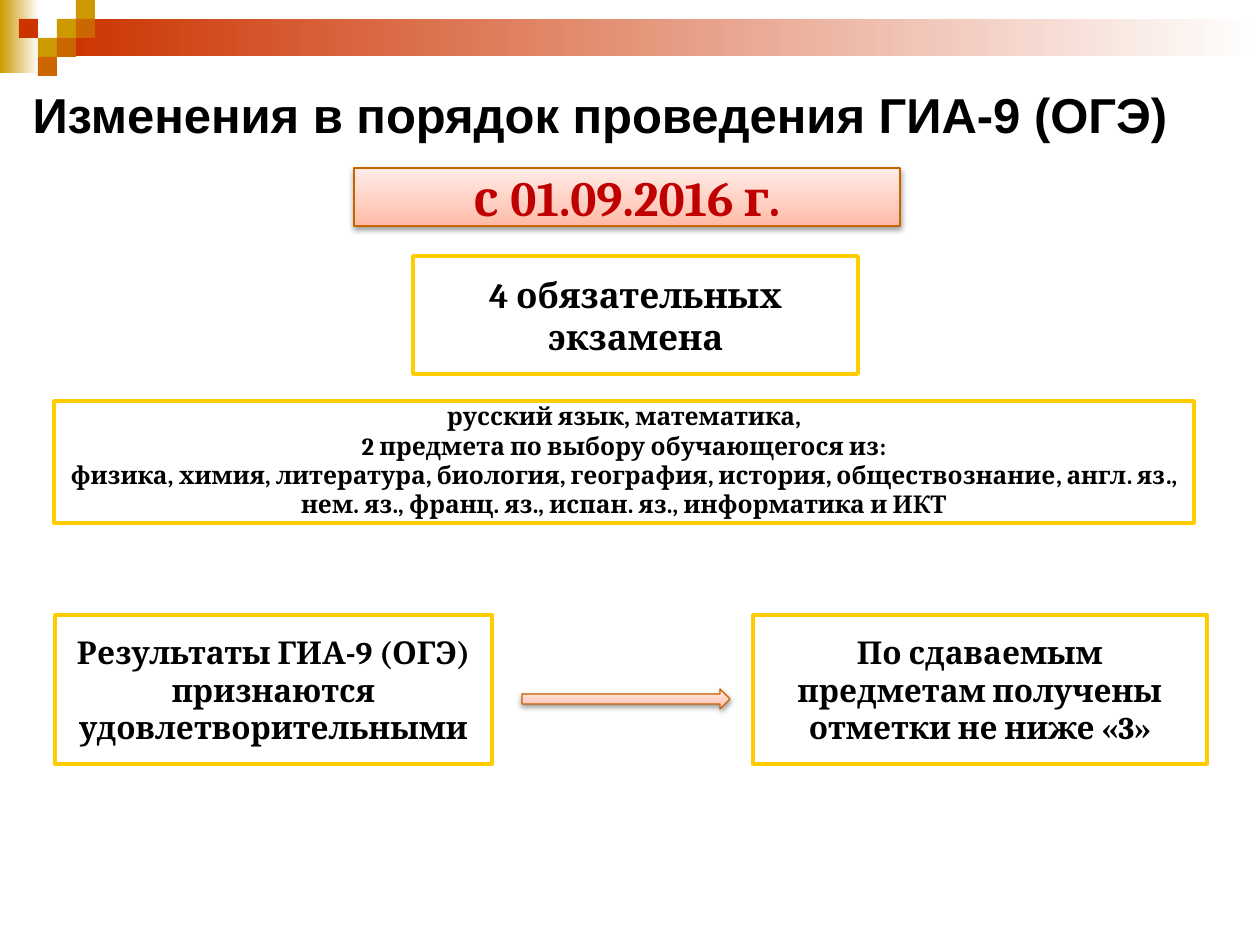
import copy
import dataclasses
import typing

import lxml.etree
import pptx
import pptx.dml.color
import pptx.enum.shapes
import pptx.enum.text
import pptx.oxml.ns
import pptx.util

Shape = pptx.enum.shapes.MSO_SHAPE
Align = pptx.enum.text.PP_ALIGN
Middle = pptx.enum.text.MSO_ANCHOR.MIDDLE
Grow = pptx.enum.text.MSO_AUTO_SIZE.SHAPE_TO_FIT_TEXT
Stops = tuple[tuple[float, str], ...]
SCALE = 914400 / 126


@dataclasses.dataclass(frozen=True)
class Theme:
    gold: str = "CC9900"
    rust: str = "CC6600"
    red: str = "CC3300"
    white: str = "FFFFFF"
    black: str = "000000"
    frame: str = "FFCC00"
    edge: str = "C86400"
    date: str = "C00000"
    blush: Stops = ((0, "FFB9A5"), (0.35, "FFCDBF"), (1, "FFECE7"))
    head: int = 28
    large: int = 20
    mid: int = 18
    small: int = 14
    sans: str = "Arial"
    serif: str = "Cambria"


THEME = Theme()


@dataclasses.dataclass(frozen=True)
class Area:
    left: int
    top: int
    width: int
    height: int


@dataclasses.dataclass(frozen=True)
class Card:
    area: Area
    size: int
    lines: tuple[str, ...]
    inset: tuple[int, int] = (6, 6)


@dataclasses.dataclass(frozen=True)
class Tile:
    col: int
    row: int
    color: str


def px(count: int) -> int:
    return round(count * SCALE)


def tint(code: str) -> pptx.dml.color.RGBColor:
    return pptx.dml.color.RGBColor.from_string(code)


def apply(item: typing.Any, values: dict[str, typing.Any]) -> None:
    for name, value in values.items():
        setattr(item, name, value)


def place(item: typing.Any, area: Area) -> None:
    apply(item, {name: px(size) for name, size in dataclasses.asdict(area).items()})


def blend(fill: typing.Any, stops: Stops, angle: int) -> None:
    fill.gradient()
    fill.gradient_angle = angle
    first = fill.gradient_stops[0]._gs
    for _ in stops[2:]:
        first.addnext(copy.deepcopy(first))
    for stop, (spot, code) in zip(fill.gradient_stops, stops):
        stop.position = spot
        stop.color.rgb = tint(code)


def block(slide: typing.Any, area: Area, paint: str | Stops, angle: int = 0,
          line: tuple[str, float] | None = None, kind: Shape = Shape.RECTANGLE) -> typing.Any:
    shape = slide.shapes.add_shape(kind, 0, 0, 0, 0)
    place(shape, area)
    shape.shadow.inherit = False
    if isinstance(paint, str):
        shape.fill.solid()
        shape.fill.fore_color.rgb = tint(paint)
    else:
        blend(shape.fill, paint, angle)
    if line:
        shape.line.color.rgb = tint(line[0])
        shape.line.width = pptx.util.Pt(line[1])
    else:
        shape.line.fill.background()
    return shape


def shade(shape: typing.Any) -> None:
    tag = pptx.oxml.ns.qn
    effects = shape._element.spPr.find(tag("a:effectLst"))
    outer = lxml.etree.SubElement(effects, tag("a:outerShdw"), blurRad="40000",
                                  dist="20000", dir="5400000", rotWithShape="0")
    color = lxml.etree.SubElement(outer, tag("a:srgbClr"), val=THEME.black)
    lxml.etree.SubElement(color, tag("a:alpha"), val="38000")


def write(shape: typing.Any, lines: tuple[str, ...], size: int, color: str, face: str,
          align: Align = Align.CENTER, inset: tuple[int, int] = (6, 6)) -> None:
    frame = shape.text_frame
    apply(frame, {"word_wrap": True, "vertical_anchor": Middle,
                  "margin_top": px(inset[0]), "margin_bottom": px(inset[1])})
    frame.text = "\n".join(lines)
    for para in frame.paragraphs:
        para.alignment = align
        for run in para.runs:
            apply(run.font, {"size": pptx.util.Pt(size), "name": face, "bold": True})
            run.font.color.rgb = tint(color)


def banner(slide: typing.Any) -> None:
    block(slide, Area(0, 0, 39, 73), ((0, THEME.gold), (1, THEME.white)))
    block(slide, Area(57, 19, 1203, 37), ((0, THEME.red), (1, THEME.white)))
    side = 19
    tiles = (
        Tile(3, 1, THEME.gold), Tile(4, 0, THEME.gold), Tile(4, 1, THEME.rust),
        Tile(2, 2, THEME.gold), Tile(1, 1, THEME.red), Tile(3, 2, THEME.rust),
        Tile(2, 3, THEME.rust),
    )
    for tile in tiles:
        block(slide, Area(tile.col * side, tile.row * side, side, side), tile.color)


def blushed(slide: typing.Any, area: Area, kind: Shape) -> typing.Any:
    shape = block(slide, area, THEME.blush, 90, (THEME.edge, 0.75), kind)
    shade(shape)
    return shape


def main() -> None:
    deck = pptx.Presentation()
    apply(deck, {"slide_width": px(1260), "slide_height": px(945)})
    slide = deck.slides.add_slide(deck.slide_layouts[5])
    banner(slide)

    title = slide.shapes.title
    place(title, Area(20, 78, 1200, 72))
    write(title, ("Изменения в порядок проведения ГИА-9 (ОГЭ)",),
          THEME.head, THEME.black, THEME.sans, Align.LEFT)
    title.text_frame.auto_size = Grow

    cards = (
        Card(Area(413, 256, 445, 118), THEME.large, ("4 обязательных экзамена",)),
        Card(Area(54, 401, 1140, 122), THEME.small, (
            "русский язык, математика,",
            "2 предмета по выбору обучающегося из:",
            "физика, химия, литература, биология, география, история, обществознание, "
            "англ. яз., нем. яз., франц. яз., испан. яз., информатика и ИКТ",
        ), (0, 4)),
        Card(Area(55, 615, 437, 149), THEME.mid,
             ("Результаты ГИА-9 (ОГЭ) признаются удовлетворительными",)),
        Card(Area(753, 615, 454, 149), THEME.mid,
             ("По сдаваемым предметам получены отметки не ниже «3»",)),
    )
    for card in cards:
        shape = block(slide, card.area, THEME.white, line=(THEME.frame, 2))
        write(shape, card.lines, card.size, THEME.black, THEME.serif, inset=card.inset)

    date = blushed(slide, Area(354, 168, 546, 58), Shape.RECTANGLE)
    write(date, ("с 01.09.2016 г.",), THEME.head, THEME.date, THEME.serif)
    blushed(slide, Area(522, 689, 208, 20), Shape.RIGHT_ARROW)
    deck.save("out.pptx")


if __name__ == "__main__":
    main()
